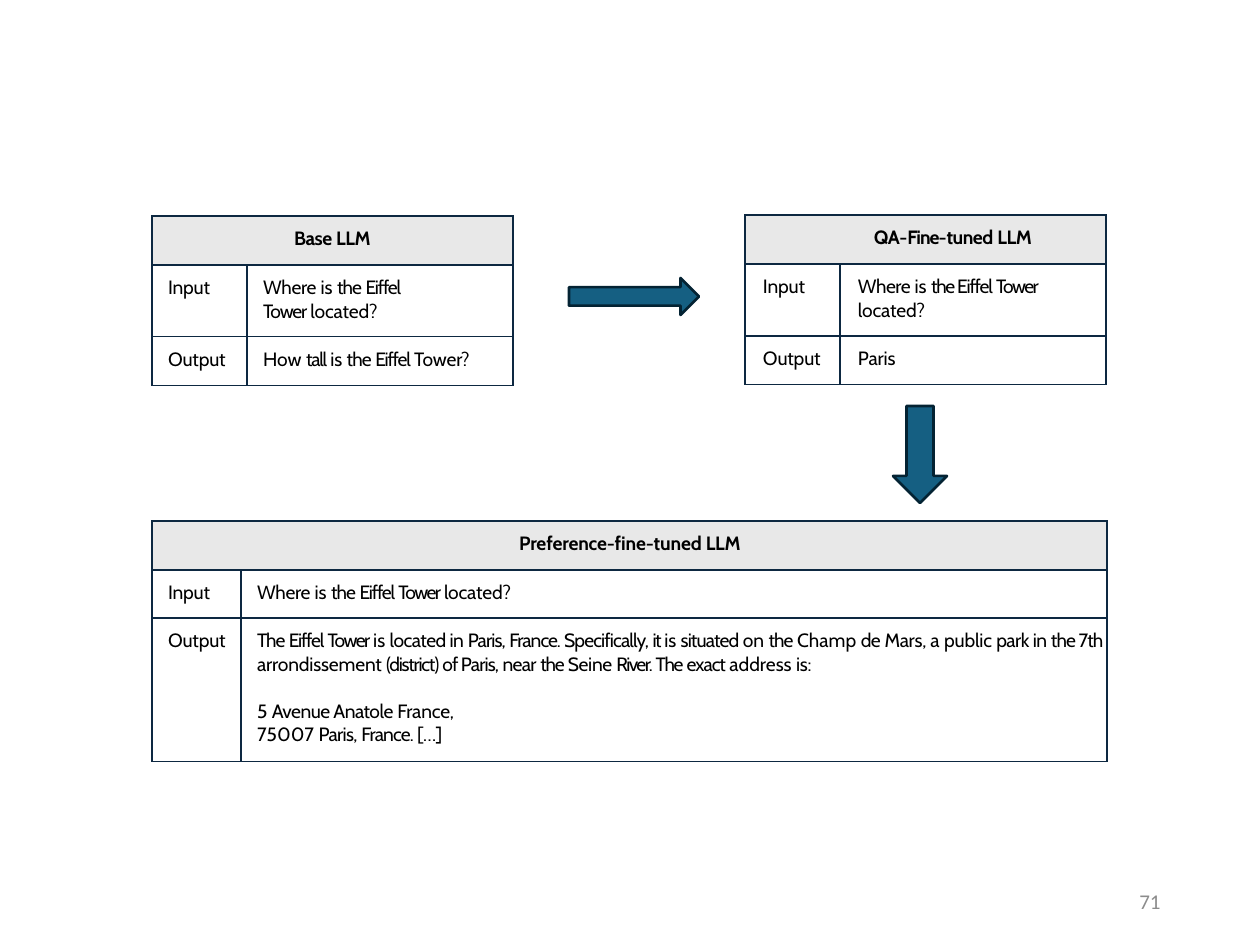
"""Build the slide that follows one question from a base LLM to a preference-fine-tuned LLM."""
from lxml.etree import SubElement
from pptx import Presentation
from pptx.dml.color import RGBColor
from pptx.enum.shapes import MSO_SHAPE
from pptx.enum.text import MSO_ANCHOR, PP_ALIGN
from pptx.oxml.ns import qn
from pptx.util import Emu, Pt

W, H = 1260, 945
NAVY, GREY, BLUE, INK = "0D2841", "E8E8E8", "155F82", "042333"
BODY = {"name": "Cabin", "size": Pt(11), "bold": False}
HEAD = BODY | {"bold": True}
NUMBER = {"name": "Calibri", "size": Pt(12), "bold": False}

INPUT, OUTPUT = [("Input", -0.1)], [("Output", -0.1)]
ANSWER = [
    [("The ", -0.6), ("Eiffel ", -0.7), ("Tower ", -0.9), ("is ", 0), ("located in ", -0.3),
     ("Paris, ", -0.5), ("France. ", -0.6), ("Specifically, ", -0.5), ("it ", -0.9), ("is ", 0),
     ("situated ", -0.5), ("on ", 0), ("the ", -0.5), ("Champ ", 0), ("de ", -0.3),
     ("Mars, ", -0.2), ("a ", 0), ("public ", -0.1), ("park in ", -0.3), ("the 7th ", -0.5),
     ("arrondissement ", -0.1), ("(district) ", -0.7), ("of Paris, ", -0.5), ("near ", -0.4),
     ("the ", -0.7), ("Seine ", -0.2), ("River. ", -0.9), ("The ", -0.7), ("exact ", -0.6),
     ("address ", 0), ("is:", -0.2)],
    [("5 ", 0), ("Avenue Anatole ", -0.3), ("France,", -0.1)],
    [("75007 ", 0), ("Paris, ", -0.4), ("France. ", -0.5), ("[…]", -0.2)],
]
TABLES = [
    {"at": (152, 216), "cols": (95, 266), "rows": (49, 72, 49), "indent": 16, "before": 8.2,
     "head_align": PP_ALIGN.CENTER, "head_indent": 0, "right": 70,
     "head": [("Base ", -0.3), ("LLM", -0.2)],
     "input": [("Where ", -0.2), ("is ", 0), ("the ", -0.5), ("Eiffel Tower ", -0.7),
               ("located?", -0.1)],
     "output": [[("How ", 0), ("tall ", -0.7), ("is ", 0), ("the ", -0.5), ("Eiffel ", -0.7),
                 ("Tower?", -0.1)]]},
    {"at": (745, 215), "cols": (95, 266), "rows": (49, 72, 49), "indent": 18, "before": 8.3,
     "head_align": PP_ALIGN.LEFT, "head_indent": 129, "right": 0,
     "head": [("QA-", -0.3), ("Fine-", -0.6), ("tuned ", -0.3), ("LLM", -0.2)],
     "input": [("Where ", -0.3), ("is ", 0), ("the Eiffel ", -0.7), ("Tower ", -0.9),
               ("located?", -0.1)],
     "output": [[("Paris", -0.1)]]},
    {"at": (152, 521), "cols": (89, 866), "rows": (49, 48, 144), "indent": 16, "before": 8.6,
     "head_align": PP_ALIGN.CENTER, "head_indent": 1, "right": 0,
     "head": [("Preference-fine-tuned LLM", -0.1)],
     "input": [("Where ", -0.2), ("is ", 0), ("the ", -0.5), ("Eiffel ", -0.7),
               ("Tower ", -0.9), ("located?", -0.1)],
     "output": ANSWER},
]
ARROWS = [(MSO_SHAPE.RIGHT_ARROW, (569, 278, 130, 37)),
          (MSO_SHAPE.DOWN_ARROW, (893, 406, 54, 97))]


def px(n):
    return Emu(round(n * 914400 / 126))


def rgb(code):
    return RGBColor.from_string(code)


def write(p, runs, font, color, align, indent=0, before=0):
    p.alignment, p.space_before = align, Pt(before)
    p._p.get_or_add_pPr().set("marL", str(px(indent)))
    for text, spacing in runs:
        r = p.add_run()
        r.text = text
        for key, value in font.items():
            setattr(r.font, key, value)
        r.font.color.rgb = rgb(color)
        r._r.get_or_add_rPr().set("spc", str(round(spacing * 100)))


def frame(cell):
    tcPr = cell._tc.get_or_add_tcPr()
    for side in ("lnL", "lnR", "lnT", "lnB"):
        ln = SubElement(tcPr, qn(f"a:{side}"), w=str(Pt(0.75)))
        SubElement(SubElement(ln, qn("a:solidFill")), qn("a:srgbClr"), val=NAVY)
    margins = {"margin_left": 0, "margin_top": px(11), "margin_right": 0, "margin_bottom": 0}
    for key, value in margins.items():
        setattr(cell, key, value)
    cell.fill.background()


def add_table(s, t):
    box = (*t["at"], sum(t["cols"]), sum(t["rows"]))
    table = s.shapes.add_table(3, 2, *map(px, box)).table
    for col, width in zip(table.columns, t["cols"]):
        col.width = px(width)
    for row, height in zip(table.rows, t["rows"]):
        row.height = px(height)
    for cell in table.iter_cells():
        frame(cell)
    head = table.cell(0, 0)
    head.merge(table.cell(0, 1))
    head.fill.solid()
    head.fill.fore_color.rgb = rgb(GREY)
    write(head.text_frame.paragraphs[0], t["head"], HEAD, "000000",
          t["head_align"], t["head_indent"], t["before"])
    table.cell(1, 1).margin_right = px(t["right"])
    body = [[[INPUT], [t["input"]]], [[OUTPUT], t["output"]]]
    for i, row in enumerate(body, 1):
        for j, paragraphs in enumerate(row):
            tf = table.cell(i, j).text_frame
            for k, runs in enumerate(paragraphs):
                p = tf.add_paragraph() if k else tf.paragraphs[0]
                before = (t["before"], 13.4, 0)[k]
                write(p, runs, BODY, "000000", PP_ALIGN.LEFT, t["indent"], before)


def add_arrow(s, kind, box):
    sp = s.shapes.add_shape(kind, *map(px, box))
    sp.shadow.inherit = False
    sp.fill.solid()
    sp.fill.fore_color.rgb = rgb(BLUE)
    sp.line.color.rgb = rgb(INK)
    sp.line.width = Pt(1.5)


def main():
    prs = Presentation()
    prs.slide_width, prs.slide_height = px(W), px(H)
    s = prs.slides.add_slide(prs.slide_layouts[6])
    for t in TABLES:
        add_table(s, t)
    for kind, box in ARROWS:
        add_arrow(s, kind, box)
    tf = s.shapes.add_textbox(*map(px, (890, 876, 283, 50))).text_frame
    tf.word_wrap, tf.vertical_anchor = True, MSO_ANCHOR.MIDDLE
    write(tf.paragraphs[0], [("71", 0)], NUMBER, "8C8C8C", PP_ALIGN.RIGHT)
    prs.save("out.pptx")


if __name__ == "__main__":
    main()
